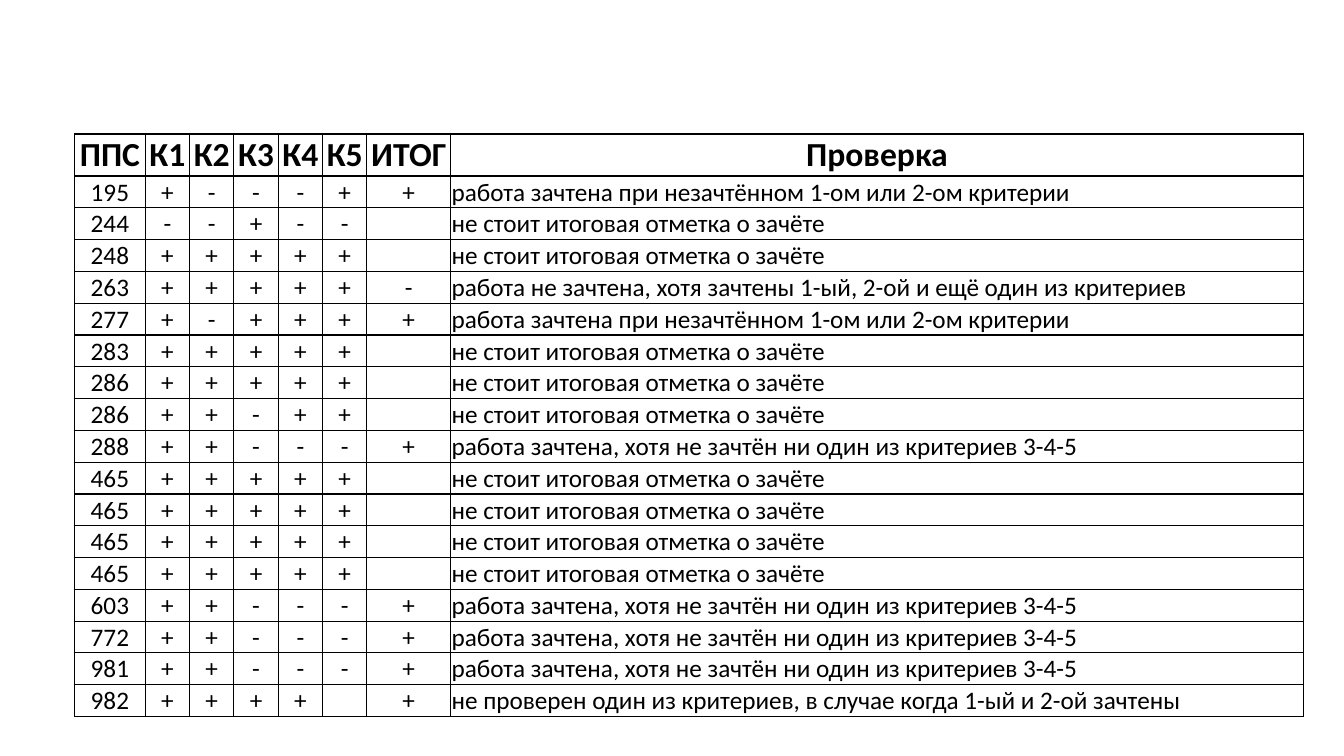
from lxml.etree import SubElement
from pptx import Presentation
from pptx.dml.color import RGBColor
from pptx.enum.text import MSO_ANCHOR, PP_ALIGN
from pptx.oxml.ns import qn
from pptx.util import Inches, Pt

HEADINGS = ["ППС", "К1", "К2", "К3", "К4", "К5", "ИТОГ", "Проверка"]
COLUMN_WIDTHS = [0.7] + [0.44] * 5 + [0.83, 8.46]
ROW_HEIGHT = 0.29

NO_TOTAL = "не стоит итоговая отметка о зачёте"
FIRST_TWO_FAILED = "работа зачтена при незачтённом 1-ом или 2-ом критерии"
LAST_THREE_FAILED = "работа зачтена, хотя не зачтён ни один из критериев 3-4-5"
WRONGLY_FAILED = "работа не зачтена, хотя зачтены 1-ый, 2-ой и ещё один из критериев"
ONE_UNCHECKED = "не проверен один из критериев, в случае когда 1-ый и 2-ой зачтены"

WORKS = [
    ("195", "+---++", FIRST_TWO_FAILED),
    ("244", "--+-- ", NO_TOTAL),
    ("248", "+++++ ", NO_TOTAL),
    ("263", "+++++-", WRONGLY_FAILED),
    ("277", "+-++++", FIRST_TWO_FAILED),
    ("283", "+++++ ", NO_TOTAL),
    ("286", "+++++ ", NO_TOTAL),
    ("286", "++-++ ", NO_TOTAL),
    ("288", "++---+", LAST_THREE_FAILED),
    ("465", "+++++ ", NO_TOTAL),
    ("465", "+++++ ", NO_TOTAL),
    ("465", "+++++ ", NO_TOTAL),
    ("465", "+++++ ", NO_TOTAL),
    ("603", "++---+", LAST_THREE_FAILED),
    ("772", "++---+", LAST_THREE_FAILED),
    ("981", "++---+", LAST_THREE_FAILED),
    ("982", "++++ +", ONE_UNCHECKED),
]

CELL_FORMAT = {
    "margin_left": Inches(0.01),
    "margin_right": Inches(0.01),
    "margin_top": Inches(0.01),
    "margin_bottom": 0,
    "vertical_anchor": MSO_ANCHOR.MIDDLE,
}
HEADING_FONT = {"name": "Calibri", "size": Pt(24), "bold": True}
WORK_FONT = {"name": "Calibri", "size": Pt(18), "bold": False}


def color(hex_value):
    """Return the colour of a hex string."""
    return RGBColor.from_string(hex_value)


def apply_format(target, values):
    """Set each attribute of the target from a dict."""
    for attribute, value in values.items():
        setattr(target, attribute, value)


def add_borders(cell, hex_value, width):
    """Draw a solid border on the four sides of a cell."""
    properties = cell._tc.get_or_add_tcPr()
    for side in ("a:lnL", "a:lnR", "a:lnT", "a:lnB"):
        border = SubElement(properties, qn(side), w=str(Pt(width)))
        fill = SubElement(border, qn("a:solidFill"))
        SubElement(fill, qn("a:srgbClr"), val=hex_value)


def fill_cell(cell, text, font_format, alignment):
    """Format one cell and write its text."""
    apply_format(cell, CELL_FORMAT)
    add_borders(cell, "000000", 1)
    cell.fill.background()
    paragraph = cell.text_frame.paragraphs[0]
    paragraph.alignment = alignment
    if text:
        run = paragraph.add_run()
        run.text = text
        apply_format(run.font, font_format)
        run.font.color.rgb = color("000000")


def add_check_table(slide, left, top):
    """Place the table of checked works at the given corner."""
    rows = [HEADINGS]
    for number, marks, remark in WORKS:
        rows.append([number, *(mark.strip() for mark in marks), remark])
    table = slide.shapes.add_table(
        len(rows), len(HEADINGS), Inches(left), Inches(top),
        Inches(sum(COLUMN_WIDTHS)), Inches(ROW_HEIGHT * len(rows)),
    ).table
    apply_format(table, {"first_row": False, "horz_banding": False})
    for column, width in zip(table.columns, COLUMN_WIDTHS):
        column.width = Inches(width)
    for row_index, texts in enumerate(rows):
        is_heading = row_index == 0
        font_format = HEADING_FONT if is_heading else WORK_FONT
        for column_index, text in enumerate(texts):
            is_remark = column_index == len(HEADINGS) - 1 and not is_heading
            alignment = PP_ALIGN.LEFT if is_remark else PP_ALIGN.CENTER
            fill_cell(table.cell(row_index, column_index), text, font_format, alignment)


def main():
    """Build the slide and save the presentation."""
    presentation = Presentation()
    presentation.slide_width = Inches(13.33)
    presentation.slide_height = Inches(7.5)
    slide = presentation.slides.add_slide(presentation.slide_layouts[6])
    add_check_table(slide, 0.74, 1.33)
    presentation.save("out.pptx")


if __name__ == "__main__":
    main()
